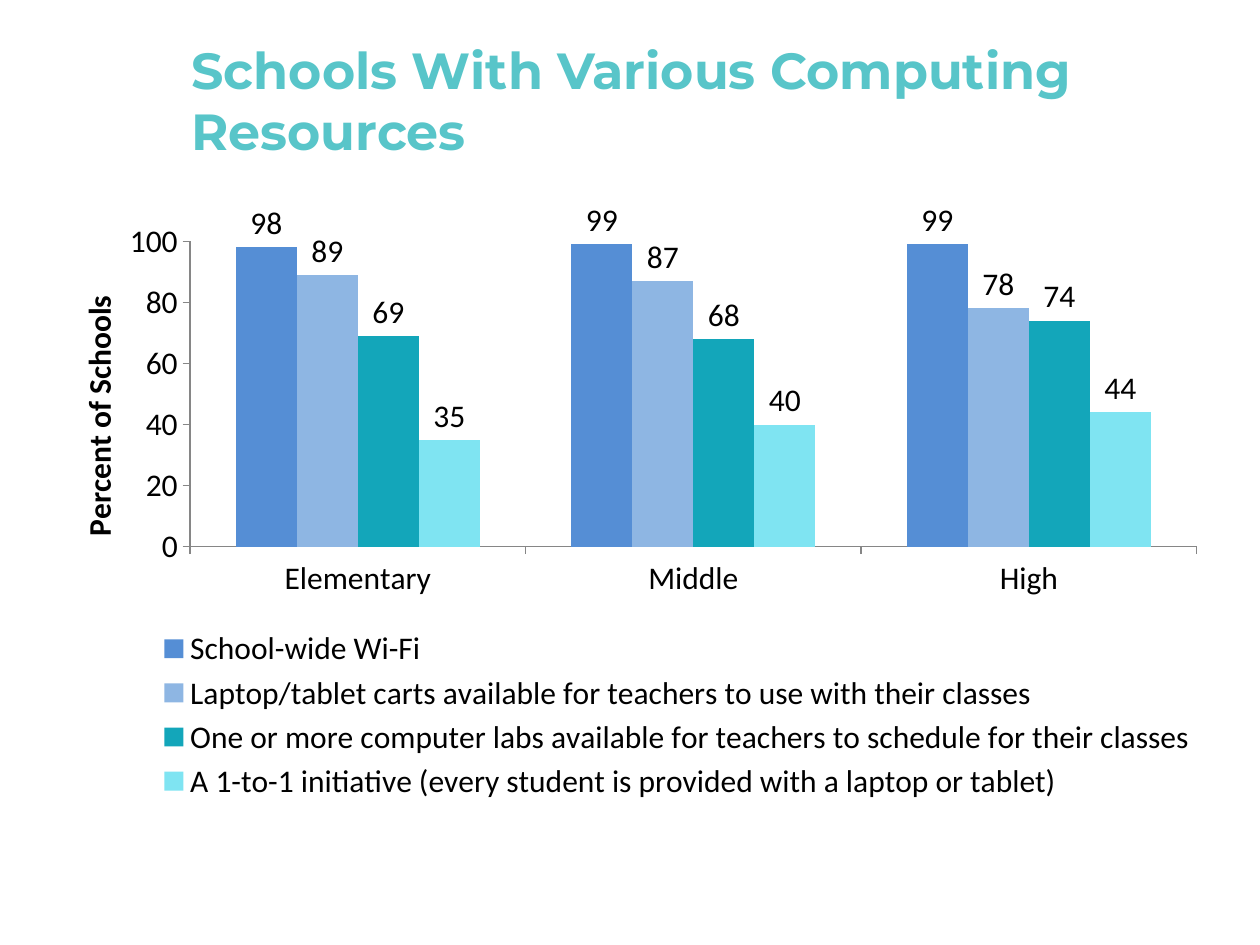
"""Builds a slide with a column chart of computing resources in schools."""
from dataclasses import dataclass

from pptx import Presentation
from pptx.chart.data import CategoryChartData
from pptx.dml.color import RGBColor as Rgb
from pptx.enum.chart import XL_CHART_TYPE as ChartType
from pptx.enum.chart import XL_LABEL_POSITION as LabelPos
from pptx.enum.chart import XL_LEGEND_POSITION as LegendPos
from pptx.enum.chart import XL_TICK_MARK as Tick
from pptx.enum.text import MSO_ANCHOR as Anchor
from pptx.oxml import parse_xml
from pptx.oxml.ns import nsdecls
from pptx.util import Emu, Pt


@dataclass(frozen=True)
class Theme:
    heading_font: str = "Montserrat"
    body_font: str = "Calibri"
    heading_size: int = 29
    body_size: int = 18
    heading: str = "58C5C9"
    text: str = "000000"
    axis: str = "868686"
    series: tuple = ("558ED5", "8EB6E3", "13A6BA", "7FE4F2")


class Board:
    SCALE = 914400 / 126

    def __init__(self, theme, width, height):
        self.theme = theme
        self.deck = Presentation()
        self.deck.slide_width, self.deck.slide_height = self.emu(width, height)
        self.slide = self.deck.slides.add_slide(self.deck.slide_layouts[6])

    def emu(self, *lengths):
        return [Emu(round(length * self.SCALE)) for length in lengths]

    def style(self, font, size, color, name, bold=False):
        font.size, font.name, font.bold = Pt(size), name, bold
        font.color.rgb = Rgb.from_string(color)

    def heading(self, box, wording):
        frame = self.slide.shapes.add_textbox(*self.emu(*box)).text_frame
        frame.word_wrap = True
        frame.vertical_anchor = Anchor.MIDDLE
        run = frame.paragraphs[0].add_run()
        run.text = wording
        theme = self.theme
        self.style(run.font, theme.heading_size, theme.heading, theme.heading_font, True)

    def place(self, part, index, target="", **fractions):
        for old in part.xpath("c:layout"):
            part.remove(old)
        inner = f'<c:layoutTarget val="{target}"/>' if target else ""
        modes = "".join(f'<c:{side}Mode val="edge"/>' for side in "xy")
        sizes = "".join(f'<c:{key} val="{value}"/>' for key, value in fractions.items())
        part.insert(index, parse_xml(
            f'<c:layout {nsdecls("c")}><c:manualLayout>{inner}{modes}{sizes}'
            "</c:manualLayout></c:layout>"))

    def columns(self, box, levels, resources, axis_name):
        theme = self.theme
        data = CategoryChartData(number_format="0")
        data.categories = levels
        for name, values in resources:
            data.add_series(name, values)
        chart = self.slide.shapes.add_chart(
            ChartType.COLUMN_CLUSTERED, *self.emu(*box), data).chart
        self.style(chart.font, theme.body_size, theme.text, theme.body_font)
        chart.has_title = False

        percent, school = chart.value_axis, chart.category_axis
        percent.minimum_scale, percent.maximum_scale, percent.major_unit = 0, 100, 20
        percent.has_major_gridlines = False
        for axis in (percent, school):
            axis.major_tick_mark, axis.minor_tick_mark = Tick.OUTSIDE, Tick.NONE
            axis.format.line.color.rgb = Rgb.from_string(theme.axis)
            axis.format.line.width = Pt(0.75)
        caption = percent.axis_title.text_frame.paragraphs[0].add_run()
        caption.text = axis_name
        self.style(caption.font, theme.body_size, theme.text, theme.body_font, True)

        plot = chart.plots[0]
        plot.gap_width, plot.overlap, plot.vary_by_categories = 150, 0, False
        for series, color in zip(plot.series, theme.series):
            series.format.fill.solid()
            series.format.fill.fore_color.rgb = Rgb.from_string(color)
            labels = series.data_labels
            labels.show_value, labels.position = True, LabelPos.OUTSIDE_END

        chart.has_legend = True
        chart.legend.position = LegendPos.BOTTOM
        chart.legend.include_in_layout = False
        self.style(chart.legend.font, theme.body_size, theme.text, theme.body_font)

        area, = chart.element.xpath("c:chart/c:plotArea")
        legend, = chart.element.xpath("c:chart/c:legend")
        title, = area.xpath("c:valAx/c:title")
        self.place(area, 0, "inner", x=0.122, y=0.083, w=0.864, h=0.485)
        self.place(legend, 1, x=0.09, y=0.69, w=0.9, h=0.29)
        self.place(title, 1, x=0.02, y=0.16)

    def save(self):
        self.deck.save("out.pptx")


def main():
    board = Board(Theme(), 1260, 945)
    resources = (
        ("School-wide Wi-Fi", (98, 99, 99)),
        ("Laptop/tablet carts available for teachers to use with their classes",
         (89, 87, 78)),
        ("One or more computer labs available for teachers to schedule for their classes",
         (69, 68, 74)),
        ("A 1-to-1 initiative (every student is provided with a laptop or tablet)",
         (35, 40, 44)),
    )
    board.columns((48, 189, 1165, 630), ("Elementary", "Middle", "High"),
                  resources, "Percent of Schools")
    board.heading((179, 21, 1018, 158), "Schools With Various Computing Resources")
    board.save()


if __name__ == "__main__":
    main()
